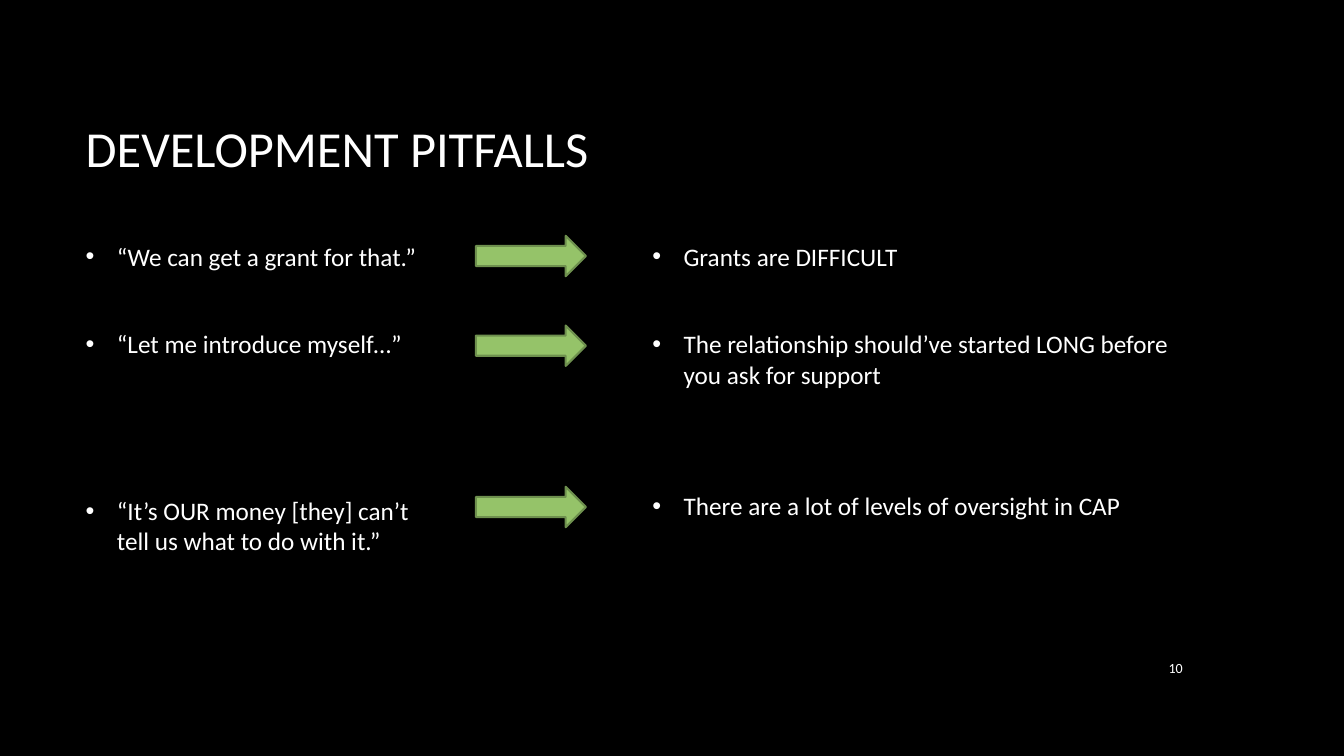
from dataclasses import dataclass

from lxml import etree
from pptx import Presentation
from pptx.dml.color import RGBColor
from pptx.enum.shapes import MSO_SHAPE as Shape
from pptx.enum.text import MSO_ANCHOR as Anchor, MSO_AUTO_SIZE as AutoSize, PP_ALIGN as Align
from pptx.oxml.ns import qn
from pptx.util import Inches, Pt

WHITE = "FFFFFF"
BLACK = "000000"
GREEN = "95C369"
DARK_GREEN = "6E904E"
FONT = "Calibri"
BODY_TOP = 2.34
COLUMN_WIDTH = 5.46


@dataclass(frozen=True)
class Point:
    lines: tuple[str, ...]
    space_before: float


@dataclass(frozen=True)
class Column:
    left: float
    points: tuple[Point, ...]


COLUMNS = (
    Column(0.75, (
        Point(("“We can get a grant for that.”",), 0),
        Point(("“Let me introduce myself…”",), 31),
        Point(("“It’s OUR money [they] can’t ", "tell us what to do with it.”"), 87.5),
    )),
    Column(6.37, (
        Point(("Grants are DIFFICULT",), 0),
        Point(("The relationship should’ve started LONG before you ask for support",), 31),
        Point(("There are a lot of levels of oversight in CAP",), 62.5),
    )),
)
ARROW_TOPS = (BODY_TOP, 3.23, 4.83)


def color(value: str) -> RGBColor:
    return RGBColor.from_string(value)


def place(shape, left: float, top: float, width: float, height: float) -> None:
    shape.left, shape.top = Inches(left), Inches(top)
    shape.width, shape.height = Inches(width), Inches(height)


def prepare_frame(shape, anchor: Anchor):
    frame = shape.text_frame
    frame.word_wrap = True
    frame.auto_size = AutoSize.NONE
    frame.vertical_anchor = anchor
    return frame


def add_span(para, text: str, size: float) -> None:
    span = para.add_run()
    span.text = text
    span.font.name = FONT
    span.font.size = Pt(size)
    span.font.color.rgb = color(WHITE)


def add_bullet(para) -> None:
    properties = para._p.get_or_add_pPr()
    properties.set("marL", str(Inches(0.31)))
    properties.set("indent", str(Inches(-0.31)))
    bullet_color = etree.SubElement(properties, qn("a:buClr"))
    etree.SubElement(bullet_color, qn("a:srgbClr"), val=WHITE)
    etree.SubElement(properties, qn("a:buFont"), typeface="Arial")
    etree.SubElement(properties, qn("a:buChar"), char="•")


def fill_column(box, column: Column) -> None:
    place(box, column.left, BODY_TOP, COLUMN_WIDTH, 3.99)
    frame = prepare_frame(box, Anchor.TOP)
    for index, point in enumerate(column.points):
        para = frame.add_paragraph() if index else frame.paragraphs[0]
        add_bullet(para)
        para.line_spacing = 1.0
        para.space_before = Pt(point.space_before)
        para.space_after = Pt(10)
        for number, line in enumerate(point.lines):
            if number:
                para.add_line_break()
            add_span(para, line, 18)


def add_arrow(page, top: float) -> None:
    arrow = page.shapes.add_shape(
        Shape.RIGHT_ARROW, Inches(4.72), Inches(top), Inches(1.09), Inches(0.4))
    arrow.shadow.inherit = False
    arrow.fill.solid()
    arrow.fill.fore_color.rgb = color(GREEN)
    arrow.line.color.rgb = color(DARK_GREEN)
    arrow.line.width = Pt(1.5)


def add_line_of_text(box, text: str, size: float, align: Align) -> None:
    para = prepare_frame(box, Anchor.MIDDLE).paragraphs[0]
    para.alignment = align
    add_span(para, text, size)


def main() -> None:
    deck = Presentation()
    deck.slide_width, deck.slide_height = Inches(13.33), Inches(7.5)
    page = deck.slides.add_slide(deck.slide_layouts.get_by_name("Two Content"))
    page.background.fill.solid()
    page.background.fill.fore_color.rgb = color(BLACK)

    title, *bodies = page.placeholders
    place(title, 0.75, 0.67, 11.08, 1.59)
    add_line_of_text(title, "DEVELOPMENT PITFALLS", 36, Align.LEFT)
    for body, column in zip(bodies, COLUMNS):
        fill_column(body, column)

    page_number = page.shapes.add_textbox(Inches(11.23), Inches(6.42), Inches(0.6), Inches(0.41))
    add_line_of_text(page_number, "10", 10, Align.RIGHT)
    for top in ARROW_TOPS:
        add_arrow(page, top)
    deck.save("out.pptx")


if __name__ == "__main__":
    main()
